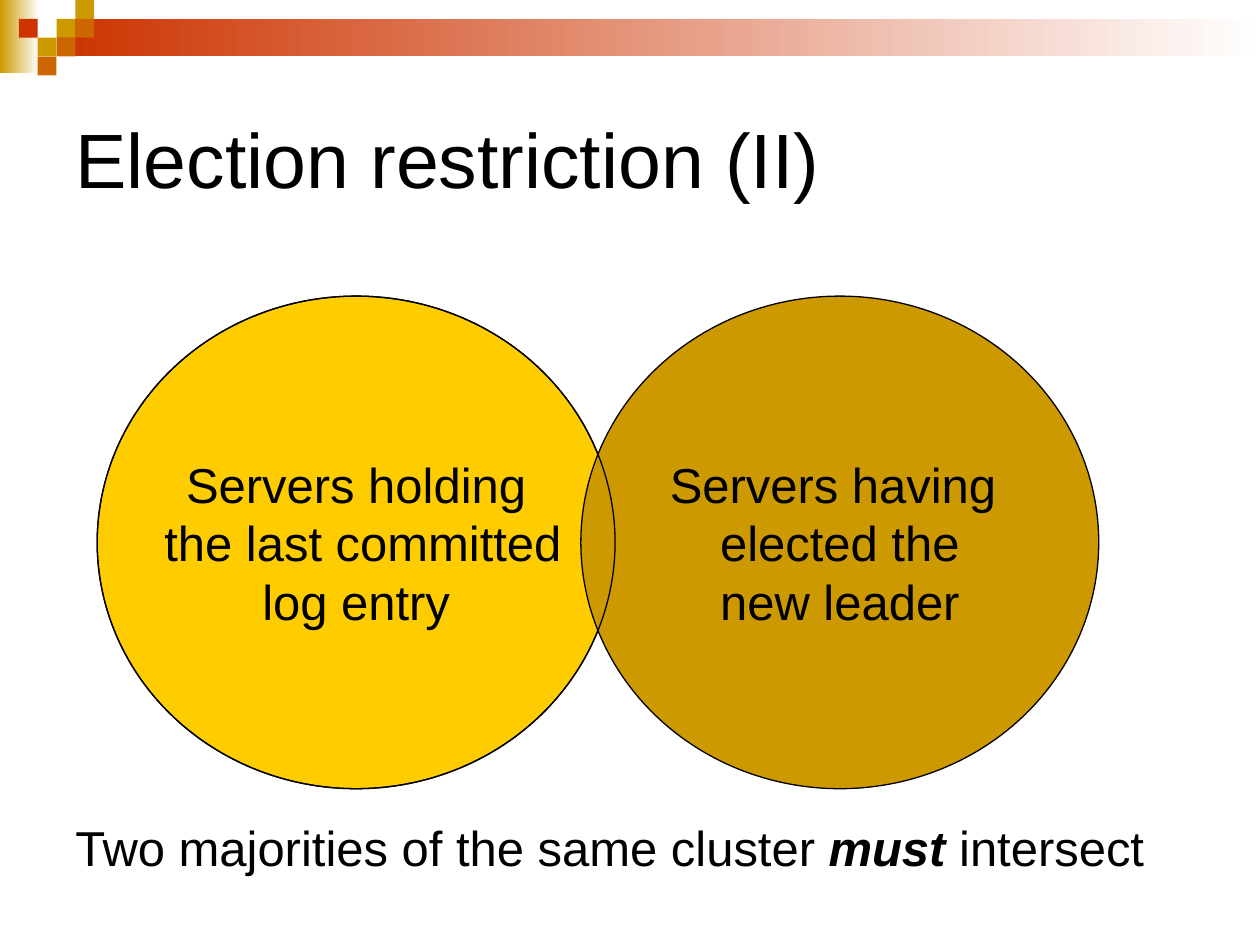
from pptx import Presentation
from pptx.dml.color import RGBColor
from pptx.enum.shapes import MSO_SHAPE
from pptx.enum.text import MSO_ANCHOR, PP_ALIGN
from pptx.util import Cm, Pt

HUES = {"ink": "000000", "paper": "FFFFFF", "gold": "CC9900",
        "red": "CC3300", "rust": "CC6600", "sun": "FFCC00"}


class Deck:
    """Holds the style and the current slide."""

    font = "Arial"

    def __init__(self, wide, high):
        self.prs = Presentation()
        self.prs.slide_width, self.prs.slide_height = Cm(wide), Cm(high)
        self.slide = self.prs.slides.add_slide(self.prs.slide_layouts[6])

    def hue(self, name):
        return RGBColor.from_string(HUES[name])

    def shape(self, kind, box, fill=None, line=None):
        item = self.slide.shapes.add_shape(kind, *map(Cm, box))
        item.shadow.inherit = False
        if fill:
            item.fill.solid()
            item.fill.fore_color.rgb = self.hue(fill)
        else:
            item.fill.background()
        if line:
            item.line.color.rgb = self.hue(line)
            item.line.width = Pt(0.75)
        else:
            item.line.fill.background()
        return item

    def fade(self, box, *names):
        fill = self.shape(MSO_SHAPE.RECTANGLE, box).fill
        fill.gradient()
        fill.gradient_angle = 0
        for stop, name in zip(fill.gradient_stops, names):
            stop.color.rgb = self.hue(name)

    def tile(self, col, row, size, fill):
        self.shape(MSO_SHAPE.RECTANGLE, (col * size, row * size, size, size), fill)

    def oval(self, box, fill=None, lines=()):
        item = self.shape(MSO_SHAPE.OVAL, box, fill, "ink")
        if lines:
            paras = [[(line, False)] for line in lines]
            self.words(item.text_frame, paras, 28, PP_ALIGN.CENTER)

    def label(self, box, runs, size, anchor, wrap):
        frame = self.slide.shapes.add_textbox(*map(Cm, box)).text_frame
        self.words(frame, [runs], size, PP_ALIGN.LEFT, anchor, wrap)

    def words(self, frame, paras, size, align, anchor=MSO_ANCHOR.MIDDLE, wrap=False):
        frame.word_wrap = wrap
        frame.vertical_anchor = anchor
        for i, runs in enumerate(paras):
            para = frame.add_paragraph() if i else frame.paragraphs[0]
            para.alignment = align
            for text, strong in runs:
                run = para.add_run()
                run.text = text
                font = run.font
                font.name, font.size = self.font, Pt(size)
                font.bold = font.italic = strong
                font.color.rgb = self.hue("ink")


def main():
    deck = Deck(25.4, 19.05)
    deck.fade((0, 0, 0.79, 1.47), "gold", "paper")
    deck.fade((1.14, 0.38, 24.26, 0.76), "red", "paper")
    for col, row, fill in [(3, 1, "gold"), (4, 0, "gold"), (4, 1, "rust"),
                           (2, 2, "gold"), (1, 1, "red"), (3, 2, "rust"),
                           (2, 3, "rust")]:
        deck.tile(col, row, 0.38, fill)

    deck.label((1.27, 1.27, 22.86, 3.81), [("Election restriction (II)", False)],
               44, MSO_ANCHOR.MIDDLE, True)

    top, wide, high = 5.97, 10.44, 9.93
    left = (1.96, top, wide, high)
    right = (11.71, top, wide, high)
    deck.oval(left, "sun", ["Servers holding", " the last committed", "log entry"])
    deck.oval(right, "gold", ["Servers having ", "elected the", "new leader"])
    deck.oval(left)

    deck.label((1.27, 16.36, 22.17, 1.45),
               [("Two majorities of the same cluster ", False), ("must", True),
                (" intersect", False)], 28, MSO_ANCHOR.TOP, False)
    deck.prs.save("out.pptx")


if __name__ == "__main__":
    main()
